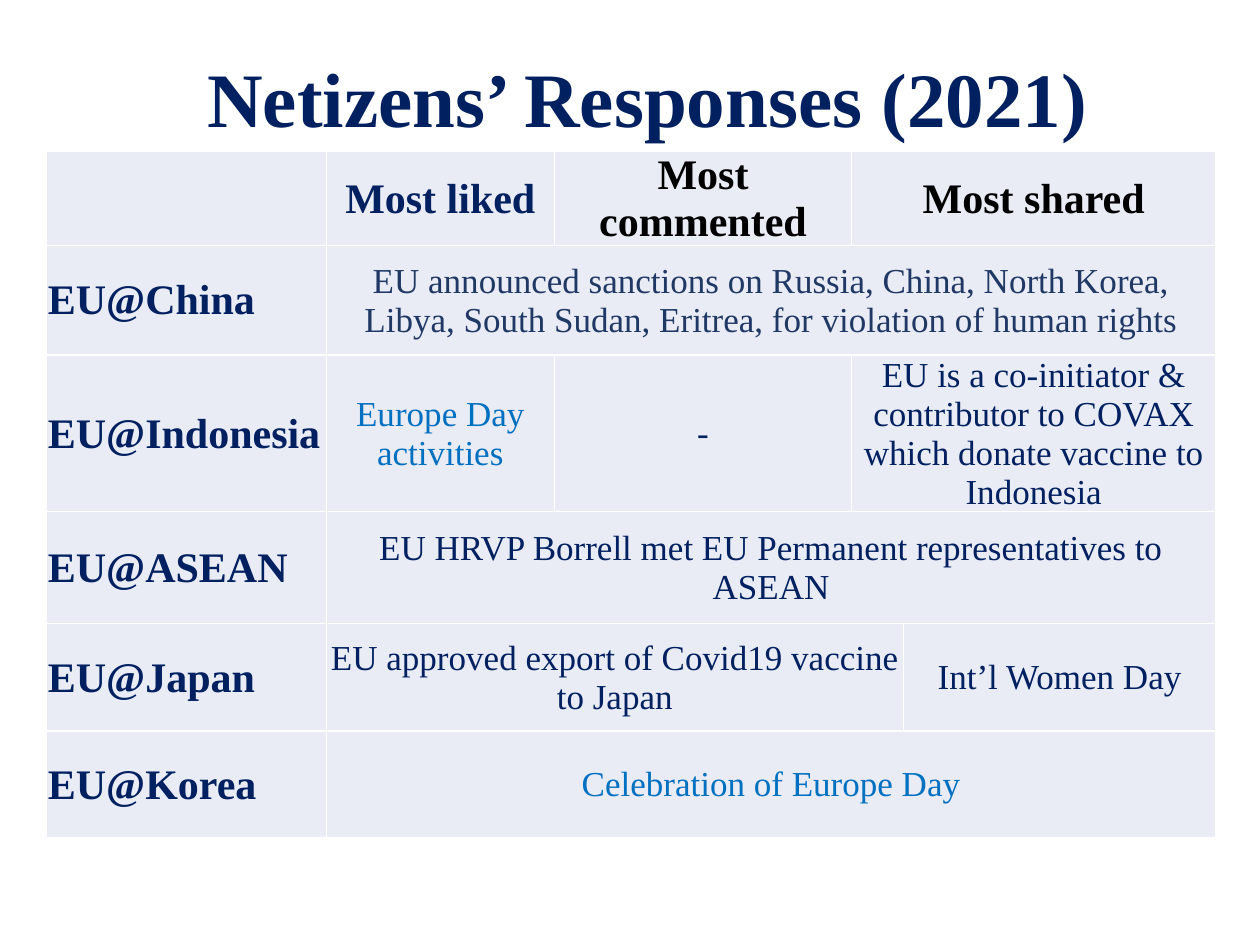
from lxml import etree
from pptx import Presentation
from pptx.dml.color import RGBColor
from pptx.enum.text import MSO_ANCHOR, PP_ALIGN
from pptx.oxml.ns import qn
from pptx.util import Inches, Pt

MIDDLE = MSO_ANCHOR.MIDDLE
LEFT, CENTER = PP_ALIGN.LEFT, PP_ALIGN.CENTER
NAVY, SLATE, BLUE, BLACK = "002060", "203864", "0070C0", "000000"
CELL_FILL, BORDER = "E9EBF5", "FFFFFF"


def rgb(value):
    return RGBColor.from_string(value)


def write(tf, text, size, color, bold, align):
    p = tf.paragraphs[0]
    p.alignment = align
    r = p.add_run()
    r.text = text
    r.font.color.rgb = rgb(color)
    font = {"name": "Times New Roman", "size": Pt(size), "bold": bold}
    for name, value in font.items():
        setattr(r.font, name, value)
    return p


prs = Presentation()
prs.slide_width, prs.slide_height = Inches(10), Inches(7.5)
s = prs.slides.add_slide(prs.slide_layouts[5])

title = s.shapes.title
place = {"left": 0.83, "top": 0.43, "width": 8.62, "height": 0.77}
for name, value in place.items():
    setattr(title, name, Inches(value))
title.text_frame.vertical_anchor = MIDDLE
p = write(title.text_frame, "Netizens’ Responses (2021)", 44, NAVY, True, CENTER)
p.line_spacing = 0.9

col_widths = [2.22, 1.81, 2.36, 0.41, 2.48]
row_heights = [0.74, 0.87, 1.24, 0.89, 0.85, 0.85]
table = s.shapes.add_table(
    len(row_heights), len(col_widths), Inches(0.37), Inches(1.2),
    Inches(sum(col_widths)), Inches(sum(row_heights))).table
for col, width in zip(table.columns, col_widths):
    col.width = Inches(width)
for row, height in zip(table.rows, row_heights):
    row.height = Inches(height)

cell_format = {
    "vertical_anchor": MIDDLE,
    "margin_left": Inches(0.01),
    "margin_right": Inches(0.01),
    "margin_top": Inches(0.01),
    "margin_bottom": Inches(0),
}
for cell in table.iter_cells():
    for name, value in cell_format.items():
        setattr(cell, name, value)
    cell.fill.solid()
    cell.fill.fore_color.rgb = rgb(CELL_FILL)
    tcPr = cell._tc.get_or_add_tcPr()
    for i, side in enumerate(["lnL", "lnR", "lnT", "lnB"]):
        ln = etree.Element(qn(f"a:{side}"), w=str(Pt(1)))
        fill = etree.SubElement(ln, qn("a:solidFill"))
        etree.SubElement(fill, qn("a:srgbClr"), val=BORDER)
        tcPr.insert(i, ln)

accounts = ["China", "Indonesia", "ASEAN", "Japan", "Korea"]
for row, account in enumerate(accounts, 1):
    write(table.cell(row, 0).text_frame, f"EU@{account}", 24, NAVY, True, LEFT)

responses = [
    (0, 1, 1, "Most liked", NAVY),
    (0, 2, 1, "Most commented", BLACK),
    (0, 3, 2, "Most shared", BLACK),
    (1, 1, 4, "EU announced sanctions on Russia, China, North Korea, Libya, "
              "South Sudan, Eritrea, for violation of human rights", SLATE),
    (2, 1, 1, "Europe Day activities", BLUE),
    (2, 2, 1, "-", NAVY),
    (2, 3, 2, "EU is a co-initiator & contributor to COVAX "
              "which donate vaccine to Indonesia", NAVY),
    (3, 1, 4, "EU HRVP Borrell met EU Permanent representatives to ASEAN", NAVY),
    (4, 1, 3, "EU approved export of Covid19 vaccine to Japan", NAVY),
    (4, 4, 1, "Int’l Women Day", NAVY),
    (5, 1, 4, "Celebration of Europe Day", BLUE),
]
for row, col, span, text, color in responses:
    cell = table.cell(row, col)
    if span > 1:
        cell.merge(table.cell(row, col + span - 1))
    header = row == 0
    write(cell.text_frame, text, 24 if header else 20, color, header, CENTER)

prs.save("out.pptx")
